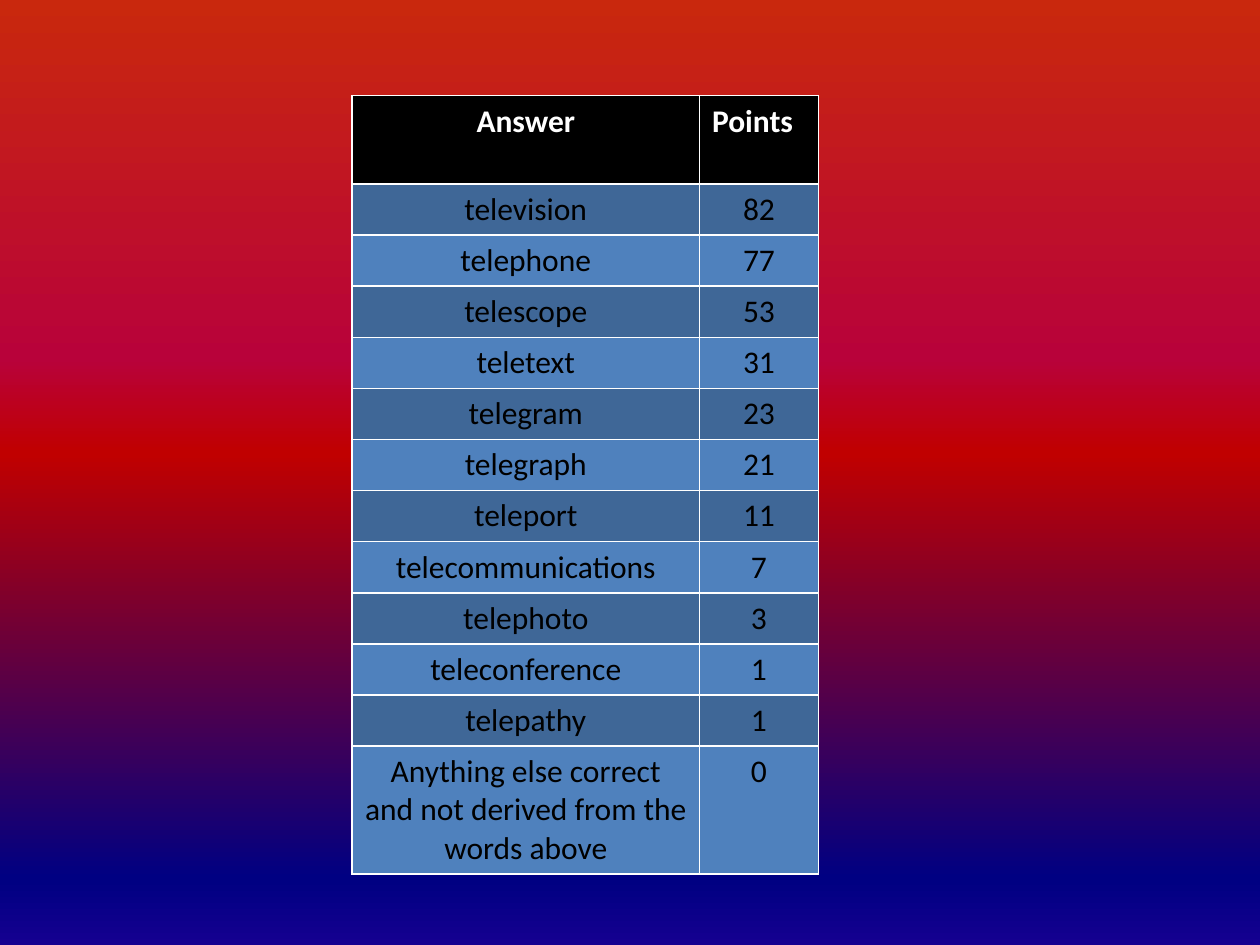
from lxml.etree import SubElement as Sub
from pptx import Presentation as Deck
from pptx.dml.color import RGBColor as Rgb
from pptx.enum.text import PP_ALIGN as Align
from pptx.oxml.ns import qn
from pptx.util import Cm, Pt

HUES = {
    "head": "000000", "dark": "3F6797", "light": "4F81BD",
    "text": "000000", "title": "FFFFFF", "line": "FFFFFF",
}
# Backdrop stops, top to bottom: percent and colour
STOPS = {0: "C9280D", 38: "B8023A", 48: "C00000", 93: "000082", 100: "150090"}
ROWS = [
    ("television", 82), ("telephone", 77), ("telescope", 53),
    ("teletext", 31), ("telegram", 23), ("telegraph", 21),
    ("teleport", 11), ("telecommunications", 7), ("telephoto", 3),
    ("teleconference", 1), ("telepathy", 1),
    ("Anything else correct and not derived from the words above", 0),
]


class Page:
    font, size, line = "Calibri", Pt(18), Pt(1)

    def __init__(self, slide):
        self.slide = slide

    def backdrop(self, stops):
        fill = self.slide.background.fill
        fill.gradient()
        fill.gradient_angle = 270
        group = next(self.slide.element.iter(qn("a:gsLst")))
        for old in list(group):
            group.remove(old)
        for place, hue in stops.items():
            stop = Sub(group, qn("a:gs"), pos=str(place * 1000))
            Sub(stop, qn("a:srgbClr"), val=hue)

    def border(self, cell):
        props = cell._tc.get_or_add_tcPr()
        for spot, side in enumerate(("lnL", "lnR", "lnT", "lnB")):
            edge = Sub(props, qn("a:" + side), w=str(self.line))
            Sub(Sub(edge, qn("a:solidFill")), qn("a:srgbClr"), val=HUES["line"])
            props.insert(spot, edge)  # borders come before the fill

    def cell(self, cell, text, back, hue, bold=False, align=Align.CENTER):
        cell.fill.solid()
        cell.fill.fore_color.rgb = Rgb.from_string(HUES[back])
        self.border(cell)
        para = cell.text_frame.paragraphs[0]
        para.alignment = align
        run = para.add_run()
        run.text = str(text)
        run.font.name, run.font.size, run.font.bold = self.font, self.size, bold
        run.font.color.rgb = Rgb.from_string(HUES[hue])

    def table(self, left, top, cols, highs, rows):
        grid = self.slide.shapes.add_table(
            len(highs), len(cols), Cm(left), Cm(top),
            Cm(sum(cols)), Cm(sum(highs))).table
        for col, wide in zip(grid.columns, cols):
            col.width = Cm(wide)
        for row, high in zip(grid.rows, highs):
            row.height = Cm(high)
        # Heading row
        self.cell(grid.cell(0, 0), "Answer", "head", "title", True)
        self.cell(grid.cell(0, 1), "Points", "head", "title", True, Align.LEFT)
        # Banded answers
        for r, row in enumerate(rows, 1):
            band = "dark" if r % 2 else "light"
            for c, text in enumerate(row):
                self.cell(grid.cell(r, c), text, band, "text")


def main():
    deck = Deck()
    deck.slide_width, deck.slide_height = Cm(25.4), Cm(19.05)
    page = Page(deck.slides.add_slide(deck.slide_layouts[6]))
    page.backdrop(STOPS)
    highs = [1.78] + [1.03] * (len(ROWS) - 1) + [2.58]
    page.table(7.1, 1.93, (7, 2.4), highs, ROWS)
    deck.save("out.pptx")


if __name__ == "__main__":
    main()
